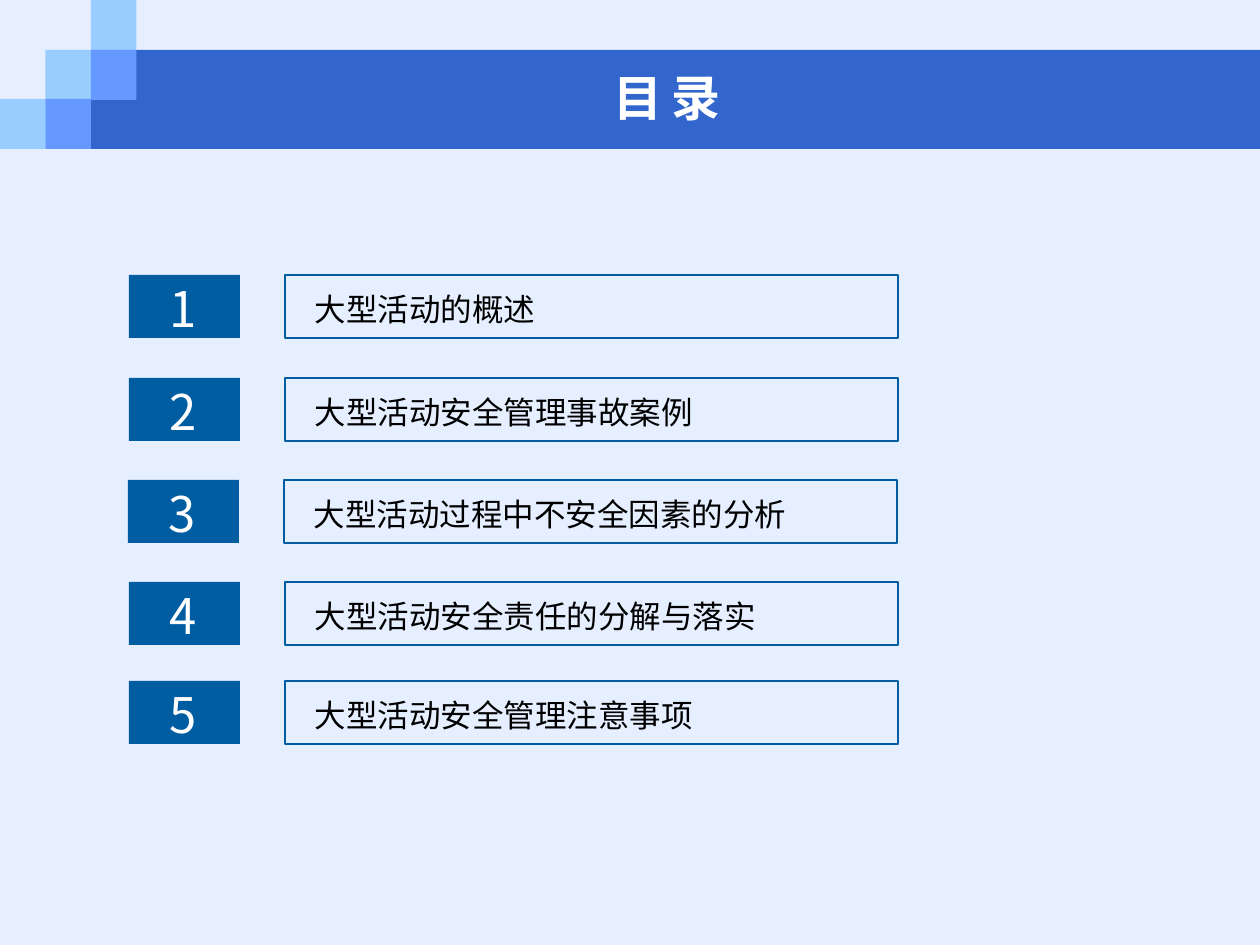
from lxml import etree
from pptx import Presentation
from pptx import util as u
from pptx.dml.color import RGBColor
from pptx.enum import shapes, text
from pptx.oxml.ns import qn

PX = u.Inches(1) / 126
FONT = "Noto Sans CJK SC"
NAVY, SKY, BLUE, WHITE = "005DA2", "99CCFF", "6699FF", "FFFFFF"

TITLE = "目录"
ITEMS = [  # left, top, wording
    (129, 275, "大型活动的概述"),
    (129, 378, "大型活动安全管理事故案例"),
    (128, 480, "大型活动过程中不安全因素的分析"),
    (129, 582, "大型活动安全责任的分解与落实"),
    (129, 681, "大型活动安全管理注意事项"),
]
TILE_W, TILE_H = 45.5, 50
TILES = [  # column, row, colour
    (0, 2, SKY), (1, 1, SKY), (2, 0, SKY), (2, 1, BLUE), (1, 2, BLUE),
]


def px(n):
    return u.Emu(round(n * PX))


def rgb(code):
    return RGBColor.from_string(code)


def rect(x, y, w, h, fill=None, line=None):
    box = slide.shapes.add_shape(
        shapes.MSO_SHAPE.RECTANGLE, px(x), px(y), px(w), px(h))
    box.shadow.inherit = False
    if fill:
        box.fill.solid()
        box.fill.fore_color.rgb = rgb(fill)
    else:
        box.fill.background()
    if line:
        box.line.color.rgb = rgb(line)
        box.line.width = u.Pt(1.25)
    else:
        box.line.fill.background()


def label(words, x, y, w, h, size, color, pad=(13, 6)):
    """Add a text box; pad is the side and top inset. Return its paragraph."""
    frame = slide.shapes.add_textbox(px(x), px(y), px(w), px(h)).text_frame
    frame.word_wrap = True
    frame.margin_left = frame.margin_right = px(pad[0])
    frame.margin_top = frame.margin_bottom = px(pad[1])
    para = frame.paragraphs[0]
    para.text = words
    font = para.font
    font.name, font.size = FONT, u.Pt(size)
    font.color.rgb = rgb(color)
    props = para._p.pPr.find(qn("a:defRPr"))
    etree.SubElement(props, qn("a:ea"), typeface=FONT)
    return para


deck = Presentation()
deck.slide_width, deck.slide_height = px(1260), px(945)
slide = deck.slides.add_slide(deck.slide_layouts[6])
back = slide.background.fill
back.solid()
back.fore_color.rgb = rgb("E6EFFF")

rect(91, 50, 1169, 99, "3366CC")
for col, row, color in TILES:
    rect(col * TILE_W, row * TILE_H - row // 2, TILE_W, TILE_H, color)

head = label(TITLE, 158, 63, 1018, 67, 28, WHITE)
head.alignment = text.PP_ALIGN.CENTER
head.font.bold = True
head.runs[0].font._element.set("spc", "500")
slide.shapes[-1].text_frame.vertical_anchor = text.MSO_ANCHOR.MIDDLE

for num, (x, y, words) in enumerate(ITEMS, 1):
    rect(x, y, 111, 63, NAVY)
    label(str(num), x + 27, y - 3, 106, 72, 28, WHITE)
    label(words, x + 177, y + 10, 518, 48, 18, "000000", (9, 5))
    rect(x + 156, y, 613, 63, line=NAVY)

deck.save("out.pptx")
